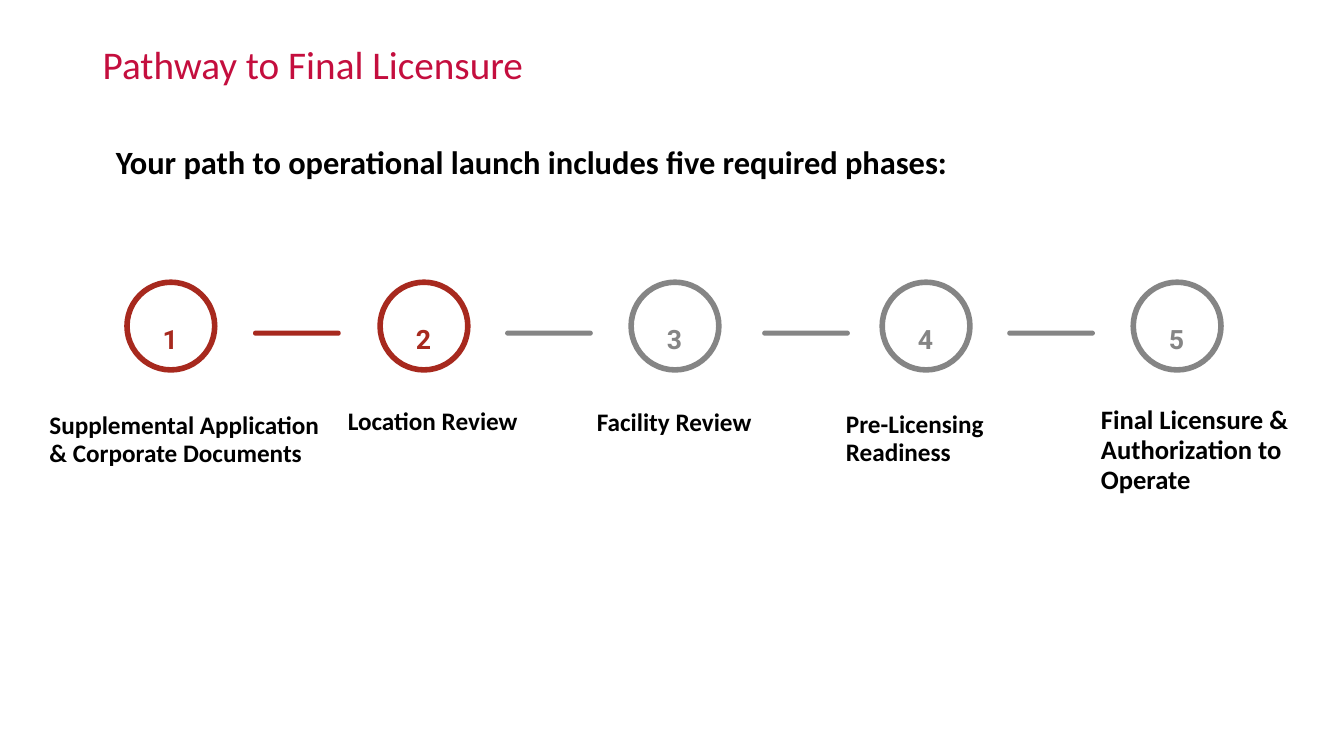
from pptx import Presentation
from pptx.dml.color import RGBColor
from pptx.enum.shapes import MSO_SHAPE
from pptx.enum.text import MSO_ANCHOR, PP_ALIGN
from pptx.util import Pt

OVAL, ROUNDED = MSO_SHAPE.OVAL, MSO_SHAPE.ROUNDED_RECTANGLE
TOP, BOTTOM = MSO_ANCHOR.TOP, MSO_ANCHOR.BOTTOM
LEFT, CENTER = PP_ALIGN.LEFT, PP_ALIGN.CENTER

SCALE = 9144  # EMU per px, 100 px to the inch
COLORS = {"title": "C40E3E", "text": "000000", "done": "A7291E", "pending": "858585"}

CIRCLE_TOP, CIRCLE_SIZE = 280, 87
BAR_TOP, BAR_HEIGHT = 328, 5

# circle left, color, label, label box, label size
PHASES = [
    (126, "done", "Supplemental Application & Corporate Documents", (36, 382, 302, 96), 18),
    (377, "done", "Location Review", (332, 343, 260, 103), 18),
    (626, "pending", "Facility Review", (579, 382, 224, 65), 18),
    (875, "pending", "Pre-Licensing Readiness", (826, 390, 249, 87), 18),
    (1124, "pending", "Final Licensure & Authorization to Operate", (1079, 395, 254, 110), 19),
]
BARS = [(251, "done"), (501, "pending"), (756, "pending"), (999, "pending")]


def px(*lengths):
    return [length * SCALE for length in lengths]


def color(name):
    return RGBColor.from_string(COLORS[name])


def add_text(shapes, box, text, size, ink, bold=True, font="Calibri", spacing=0.95,
             align=LEFT, anchor=TOP, insets=(13, 13)):
    frame = shapes.add_textbox(*px(*box)).text_frame
    frame.word_wrap = True
    frame.vertical_anchor = anchor
    frame.margin_left = frame.margin_right = insets[0] * SCALE
    frame.margin_top = frame.margin_bottom = insets[1] * SCALE
    para = frame.paragraphs[0]
    para.alignment = align
    para.line_spacing = spacing
    span = para.add_run()
    span.text = text
    span.font.name = font
    span.font.size = Pt(size)
    span.font.bold = bold
    span.font.color.rgb = color(ink)


def add_headings(page, box):
    left, top, width, height = box
    add_text(page.shapes, box, "Pathway to Final Licensure", 28, "title",
             bold=False, spacing=0.9, insets=(10, 5))
    add_text(page.shapes, (left + 13, top + 99, width, height),
             "Your path to operational launch includes five required phases:",
             23.2, "text", insets=(10, 5))


def add_phase(page, number, left, ink, label, label_box, label_size):
    shapes = page.shapes.add_group_shape().shapes
    # Ring
    ring = shapes.add_shape(OVAL, *px(left, CIRCLE_TOP, CIRCLE_SIZE, CIRCLE_SIZE))
    ring.shadow.inherit = False
    ring.fill.background()
    ring.line.color.rgb = color(ink)
    ring.line.width = Pt(4)
    # Number and label
    add_text(shapes, (left + 11, CIRCLE_TOP + 23, 64, 47), str(number), 19, ink,
             font="Roboto", spacing=1.15, align=CENTER)
    add_text(shapes, label_box, label, label_size, "text", anchor=BOTTOM)


def add_bar(page, left, ink):
    bar = page.shapes.add_shape(ROUNDED, *px(left, BAR_TOP, CIRCLE_SIZE, BAR_HEIGHT))
    bar.adjustments[0] = 0.5
    bar.shadow.inherit = False
    bar.fill.solid()
    bar.fill.fore_color.rgb = color(ink)
    bar.line.fill.background()


def main():
    deck = Presentation()
    deck.slide_width, deck.slide_height = px(1333, 750)
    page = deck.slides.add_slide(deck.slide_layouts[6])
    add_headings(page, (92, 40, 1150, 85))
    for number, phase in enumerate(PHASES, 1):
        add_phase(page, number, *phase)
    for left, ink in BARS:
        add_bar(page, left, ink)
    deck.save("out.pptx")


if __name__ == "__main__":
    main()
